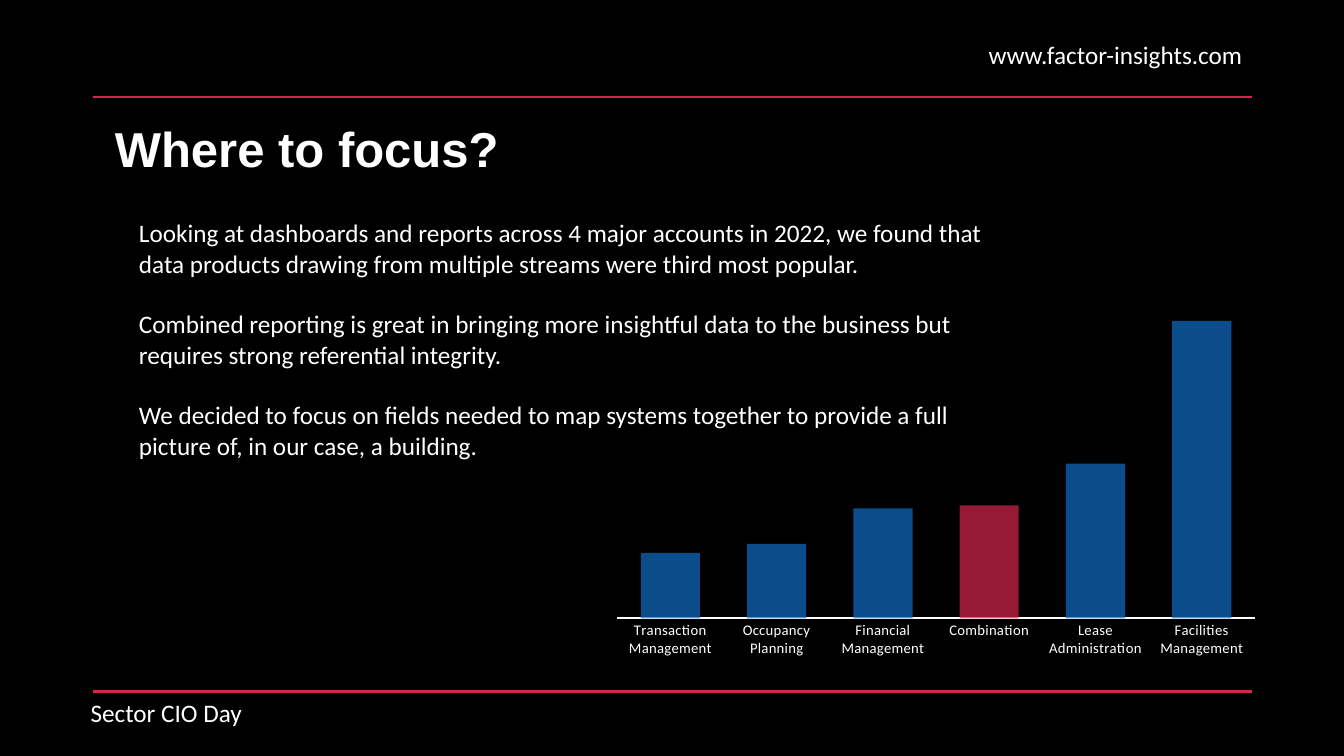
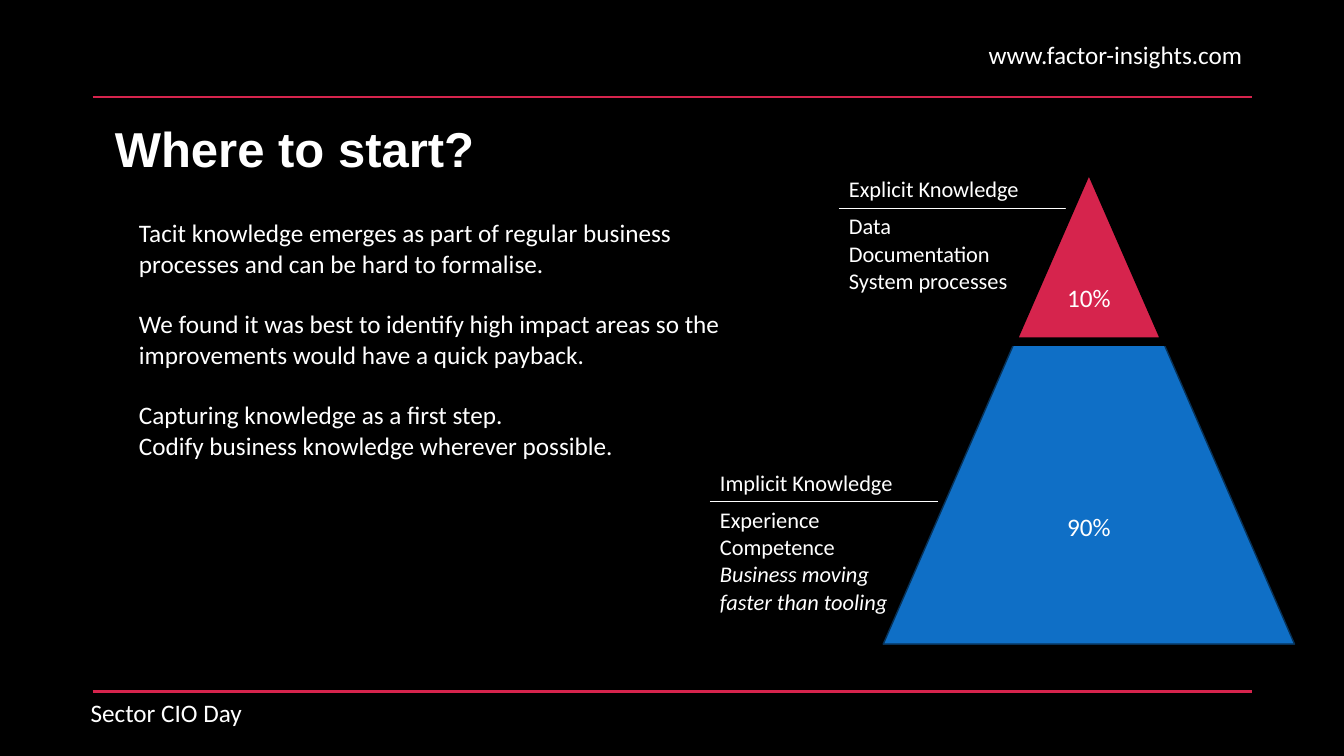
import lxml.etree
import pptx
import pptx.chart.data
import pptx.dml.color
import pptx.enum.chart
import pptx.enum.shapes
import pptx.enum.text
import pptx.oxml.ns
import pptx.util

Inches, Pt = pptx.util.Inches, pptx.util.Pt
qn = pptx.oxml.ns.qn
ALIGN = pptx.enum.text.PP_ALIGN

BLACK, WHITE = "000000", "FFFFFF"
RED, BLUE, NAVY = "D6244D", "0F6FC6", "073157"
LEFT, RIGHT, TOP, FOOT = 0.92, 12.42, 0.96, 6.86
NO_GRID = "{2D5ABB26-0587-4C30-8999-92F81FD0307C}"

BODY = {"name": "Calibri", "size": Pt(18)}
TITLE = {"name": "Arial", "size": Pt(35), "bold": True}
CELL = {**BODY, "size": Pt(16)}
LABEL = {**BODY, "size": Pt(10.5)}


def tint(code):
    return pptx.dml.color.RGBColor.from_string(code)


def sub(node, tag, **vals):
    """Append a child element with the given attributes."""
    return lxml.etree.SubElement(node, qn(tag), vals)


def style(font, form):
    for key, val in form.items():
        setattr(font, key, val)
    font.color.rgb = tint(WHITE)


class Deck:
    def __init__(self):
        self.prs = pptx.Presentation()
        self.prs.slide_width = Inches(13.33)
        self.prs.slide_height = Inches(7.5)
        fill = self.prs.slide_master.background.fill
        fill.solid()
        fill.fore_color.rgb = tint(BLACK)

    def start(self, title):
        """Add a slide with its rules, header, footer and title."""
        slide = self.prs.slides.add_slide(self.prs.slide_layouts[6])
        self.shapes = slide.shapes
        for y in (TOP, FOOT):
            self.rule(y)
        self.text((8.96, 0.34, 3.46, 0.4), ["www.factor-insights.com"],
                  align=ALIGN.RIGHT)
        self.text((0.8, 6.87, 3.46, 0.4), ["Sector CIO Day"])
        self.text((1.04, 1.13, 6.69, 0.82), [title], TITLE)

    def rule(self, y):
        line = self.shapes.add_connector(
            pptx.enum.shapes.MSO_CONNECTOR.STRAIGHT,
            Inches(LEFT), Inches(y), Inches(RIGHT), Inches(y))
        line.line.color.rgb = tint(RED)
        line.line.width = Pt(1.5)
        sub(line._element.spPr, "a:effectLst")

    def put(self, frame, blocks, form, align=ALIGN.LEFT, gap=21.8):
        """Fill a frame: blocks stand apart, lines in a block do not."""
        frame.word_wrap = True
        para = frame.paragraphs[0]
        for num, block in enumerate(blocks):
            for row, line in enumerate(block.split("\n")):
                if num or row:
                    para = frame.add_paragraph()
                    para.space_before = Pt(0 if row else gap)
                para.alignment = align
                run = para.add_run()
                run.text = line
                style(run.font, form)

    def text(self, box, blocks, form=BODY, align=ALIGN.LEFT):
        shape = self.shapes.add_textbox(*map(Inches, box))
        self.put(shape.text_frame, blocks, form, align)

    def peak(self, box, label, fill, edge, width):
        """Add a triangle with a centred label."""
        shape = self.shapes.add_shape(
            pptx.enum.shapes.MSO_SHAPE.ISOSCELES_TRIANGLE, *map(Inches, box))
        shape.shadow.inherit = False
        shape.fill.solid()
        shape.fill.fore_color.rgb = tint(fill)
        shape.line.color.rgb = tint(edge)
        shape.line.width = Pt(width)
        frame = shape.text_frame
        frame.vertical_anchor = pptx.enum.text.MSO_ANCHOR.MIDDLE
        self.put(frame, [label], BODY, ALIGN.CENTER)

    def table(self, box, head, body):
        """Add a two-row table with one line under its head."""
        table = self.shapes.add_table(2, 1, *map(Inches, box)).table
        table.first_row = table.horz_banding = False
        table._tbl.tblPr.find(qn("a:tableStyleId")).text = NO_GRID
        rows = ((0.36, "a:lnB", head), (box[3] - 0.36, "a:lnT", body))
        for num, (high, side, words) in enumerate(rows):
            table.rows[num].height = Inches(high)
            cell = table.cell(num, 0)
            edge = sub(cell._tc.get_or_add_tcPr(), side, w=str(Pt(1)))
            sub(sub(edge, "a:solidFill"), "a:srgbClr", val=WHITE)
            cell.fill.background()
            self.put(cell.text_frame, [words], CELL)
        return table

    def chart(self, box, data, mark):
        """Add a column chart with the column at index mark in red."""
        kind = pptx.enum.chart.XL_CHART_TYPE.COLUMN_CLUSTERED
        feed = pptx.chart.data.CategoryChartData()
        feed.categories = list(data)
        feed.add_series("Series 1", list(data.values()))
        chart = self.shapes.add_chart(kind, *map(Inches, box), feed).chart
        chart.has_legend = chart.has_title = False
        style(chart.font, {**BODY, "size": Pt(10)})

        plot = chart.plots[0]
        plot.vary_by_categories = False
        plot.gap_width, plot.overlap = 80, 25
        bars = plot.series[0]
        for part, code in ((bars, BLUE), (bars.points[mark], RED)):
            part.format.fill.solid()
            part.format.fill.fore_color.rgb = tint(code)
        for node in list(bars._element.iter(qn("a:srgbClr"))):
            sub(node, "a:alpha", val="70000")

        scale = chart.value_axis
        scale.visible = scale.has_major_gridlines = False
        scale.minimum_scale, scale.maximum_scale = 0, 109
        axis = chart.category_axis
        axis.major_tick_mark = pptx.enum.chart.XL_TICK_MARK.NONE
        axis.format.line.color.rgb = tint(WHITE)
        axis.format.line.width = Pt(1.25)
        style(axis.tick_labels.font, LABEL)
        for node in axis._element.iter(qn("a:defRPr")):
            node.set("spc", "20")

        area = chart._chartSpace.find(".//" + qn("c:plotArea"))
        for old in area.findall(qn("c:layout")):
            area.remove(old)
        frame = sub(area, "c:layout")
        area.insert(0, frame)
        spot = sub(frame, "c:manualLayout")
        for key, val in {"layoutTarget": "inner", "xMode": "edge",
                         "yMode": "edge", "x": "0.023", "y": "0.043",
                         "w": "0.954", "h": "0.823"}.items():
            sub(spot, "c:" + key, val=val)


def focus(deck):
    deck.start("Where to focus?")
    deck.chart((5.97, 2.75, 6.63, 3.91), {
        "Transaction Management": 22,
        "Occupancy Planning": 25,
        "Financial Management": 37,
        "Combination": 38,
        "Lease Administration": 52,
        "Facilities Management": 100,
    }, mark=3)
    deck.text((1.28, 2.11, 8.91, 2.52), [
        "Looking at dashboards and reports across 4 major accounts in 2022, "
        "we found that data products drawing from multiple streams were "
        "third most popular.",
        "Combined reporting is great in bringing more insightful data to the "
        "business but requires strong referential integrity.",
        "We decided to focus on fields needed to map systems together to "
        "provide a full picture of, in our case, a building.",
    ])


def begin(deck):
    deck.start("Where to start?")
    deck.text((1.28, 2.11, 6.2, 2.52), [
        "Tacit knowledge emerges as part of regular business processes and "
        "can be hard to formalise.",
        "We found it was best to identify high impact areas so the "
        "improvements would have a quick payback.",
        "Capturing knowledge as a first step.\n"
        "Codify business knowledge wherever possible.",
    ])
    deck.peak((8.76, 1.7, 4.08, 4.69), "90%", BLUE, NAVY, 1)
    deck.table((8.32, 1.7, 2.35, 1.53), "Explicit Knowledge",
               "Data\nDocumentation\nSystem processes")
    table = deck.table(
        (7.04, 4.61, 2.26, 1.8), "Implicit Knowledge",
        "Experience\nCompetence\nBusiness moving\nfaster than tooling")
    for para in table.cell(1, 0).text_frame.paragraphs[-2:]:
        para.runs[0].font.italic = True
    deck.peak((10.04, 1.65, 1.52, 1.74), "10%", RED, BLACK, 6)


def main():
    deck = Deck()
    focus(deck)
    begin(deck)
    deck.prs.save("out.pptx")


if __name__ == "__main__":
    main()
